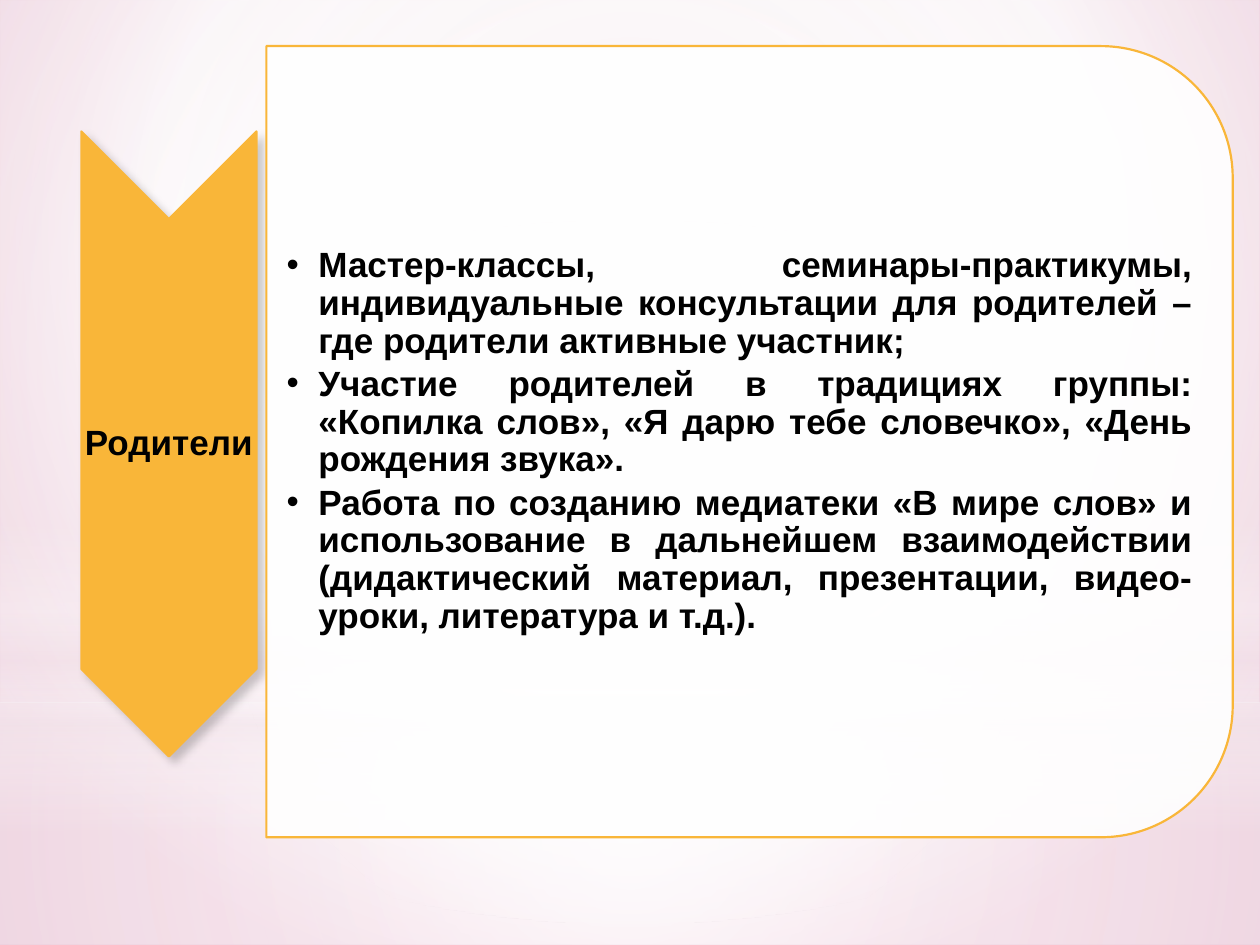
from lxml.etree import SubElement
from pptx import Presentation
from pptx.dml.color import RGBColor
from pptx.enum.shapes import MSO_SHAPE
from pptx.enum.text import MSO_ANCHOR, PP_ALIGN
from pptx.oxml.ns import qn
from pptx.util import Cm, Pt

COLORS = {
    "amber": "F9B639",
    "white": "FFFFFF",
    "black": "000000",
    "blush": "F4E7ED",
    "mist": "EDDAE2",
    "rose": "E09DBC",
}
CENTRE = (50, 50, 50, 50)
TOPIC = "Родители"
ACTIVITIES = [
    "Мастер-классы, семинары-практикумы, индивидуальные консультации для родителей – где родители активные участник;",
    "Участие родителей в традициях группы: «Копилка слов», «Я дарю тебе словечко», «День рождения звука».",
    "Работа по созданию медиатеки «В мире слов» и использование в дальнейшем взаимодействии "
    "(дидактический материал, презентации, видео-уроки, литература и т.д.).",
]


def rgb(name):
    return RGBColor.from_string(COLORS[name])


def add_child(parent, tag, **attributes):
    return SubElement(parent, qn(tag), {key: str(value) for key, value in attributes.items()})


def add_color(parent, name, opacity):
    color = add_child(parent, "a:srgbClr", val=COLORS[name])
    if opacity < 100:
        add_child(color, "a:alpha", val=opacity * 1000)


def paint_gradient(fill, owner, stops, focus=None):
    fill.gradient()
    gradient = owner.find(".//" + qn("a:gradFill"))
    for child in list(gradient):
        gradient.remove(child)
    stop_list = add_child(gradient, "a:gsLst")
    for position, name, opacity in stops:
        add_color(add_child(stop_list, "a:gs", pos=position * 1000), name, opacity)
    if focus is None:
        add_child(gradient, "a:lin", ang=90 * 60000, scaled=0)
    else:
        circle = add_child(gradient, "a:path", path="circle")
        edges = {edge: share * 1000 for edge, share in zip("ltrb", focus)}
        add_child(circle, "a:fillToRect", **edges)


def add_glow(slide, kind, top, height, stops, focus=CENTRE):
    glow = slide.shapes.add_shape(kind, 0, Cm(top), Cm(25.4), Cm(height))
    glow.shadow.inherit = False
    glow.line.fill.background()
    paint_gradient(glow.fill, glow.element, stops, focus)


def add_backdrop(slide):
    paint_gradient(
        slide.background.fill, slide.element,
        [(0, "mist", 100), (60, "white", 100), (100, "rose", 100)], (20, 10, 20, 60),
    )
    add_glow(slide, MSO_SHAPE.RECTANGLE, 14.17, 4.88,
             [(0, "white", 91), (37, "white", 76), (100, "blush", 79)])
    add_glow(slide, MSO_SHAPE.RECTANGLE, 0, 14.17,
             [(0, "white", 89), (48, "white", 62), (100, "blush", 79)])
    add_glow(slide, MSO_SHAPE.RECTANGLE, 10.46, 6.35,
             [(0, "white", 0), (29, "white", 30), (45, "blush", 40),
              (55, "white", 26), (65, "blush", 60), (100, "white", 0)], None)
    add_glow(slide, MSO_SHAPE.OVAL, 4.45, 14.17, [(0, "white", 100), (56, "white", 0)])


def add_turned_shape(slide, kind, left, top, width, height, fill_name):
    offset = (width - height) / 2
    shape = slide.shapes.add_shape(kind, Cm(left + offset), Cm(top - offset), Cm(height), Cm(width))
    shape.rotation = 90
    shape.shadow.inherit = False
    shape.fill.solid()
    shape.fill.fore_color.rgb = rgb(fill_name)
    shape.line.color.rgb = rgb("amber")
    shape.line.width = Pt(1.25)
    return shape


def add_bold_text(slide, left, top, width, height, lines, align, space_after, inset):
    frame = slide.shapes.add_textbox(Cm(left), Cm(top), Cm(width), Cm(height)).text_frame
    frame.word_wrap = True
    frame.vertical_anchor = MSO_ANCHOR.MIDDLE
    frame.margin_left = Cm(inset)
    frame.margin_top = frame.margin_right = frame.margin_bottom = Cm(0.03)
    frame.text = "\n".join(lines)
    for paragraph in frame.paragraphs:
        paragraph.alignment = align
        paragraph.line_spacing = 0.9
        paragraph.space_after = Pt(space_after)
        for run in paragraph.runs:
            run.font.name = "Arial"
            run.font.size = Pt(20)
            run.font.bold = True
            run.font.color.rgb = rgb("black")
    return frame


def add_topic_arrow(slide, left, top, width, height):
    arrow = add_turned_shape(slide, MSO_SHAPE.CHEVRON, left, top, width, height, "amber")
    effects = arrow.element.spPr.find(qn("a:effectLst"))
    shadow = add_child(effects, "a:outerShdw", blurRad=Pt(5), dist=Pt(4),
                       dir=45 * 60000, rotWithShape=0)
    add_color(shadow, "black", 20)
    add_bold_text(slide, left, top + width / 2, width, height - width,
                  [TOPIC], PP_ALIGN.CENTER, 7, 0.03)


def add_activity_panel(slide, left, top, width, height):
    panel = add_turned_shape(slide, MSO_SHAPE.ROUND_2_SAME_RECTANGLE,
                             left, top, width, height, "white")
    add_child(panel.element.spPr.find(qn("a:solidFill"))[0], "a:alpha", val=90000)
    frame = add_bold_text(slide, left, top + 0.78, width - 0.78, height - 1.56,
                          ACTIVITIES, PP_ALIGN.JUSTIFY, 3, 0.41)
    for paragraph in frame.paragraphs:
        properties = paragraph._p.get_or_add_pPr()
        properties.set("marL", str(Cm(0.64)))
        properties.set("indent", str(Cm(-0.64)))
        add_child(properties, "a:buFont", typeface="Arial")
        add_child(properties, "a:buChar", char="•")


def main():
    presentation = Presentation()
    presentation.slide_width = Cm(25.4)
    presentation.slide_height = Cm(19.05)
    slide = presentation.slides.add_slide(presentation.slide_layouts[6])
    add_backdrop(slide)
    add_topic_arrow(slide, 1.64, 2.65, 3.53, 12.6)
    add_activity_panel(slide, 5.37, 0.93, 19.48, 15.95)
    presentation.save("out.pptx")


if __name__ == "__main__":
    main()
